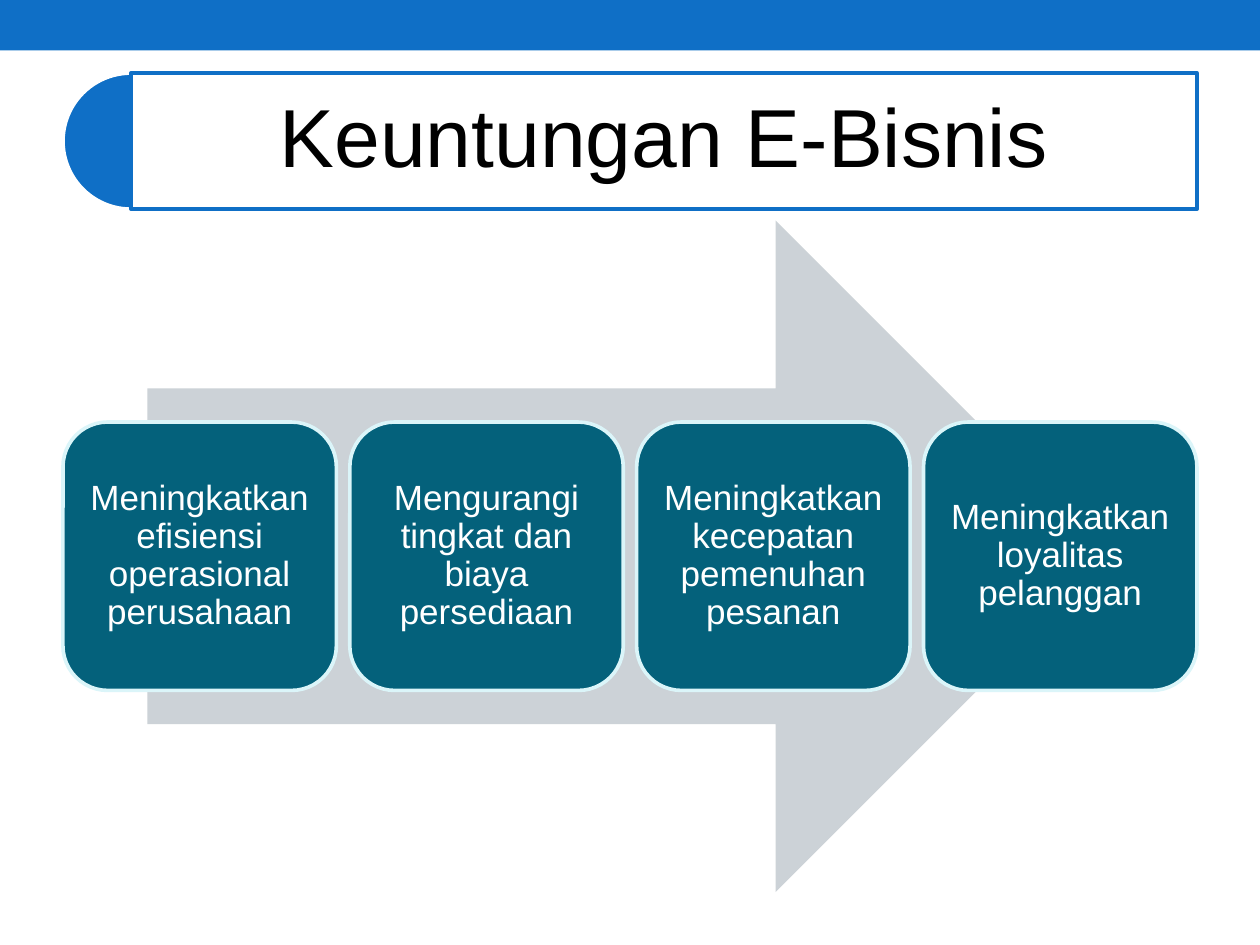
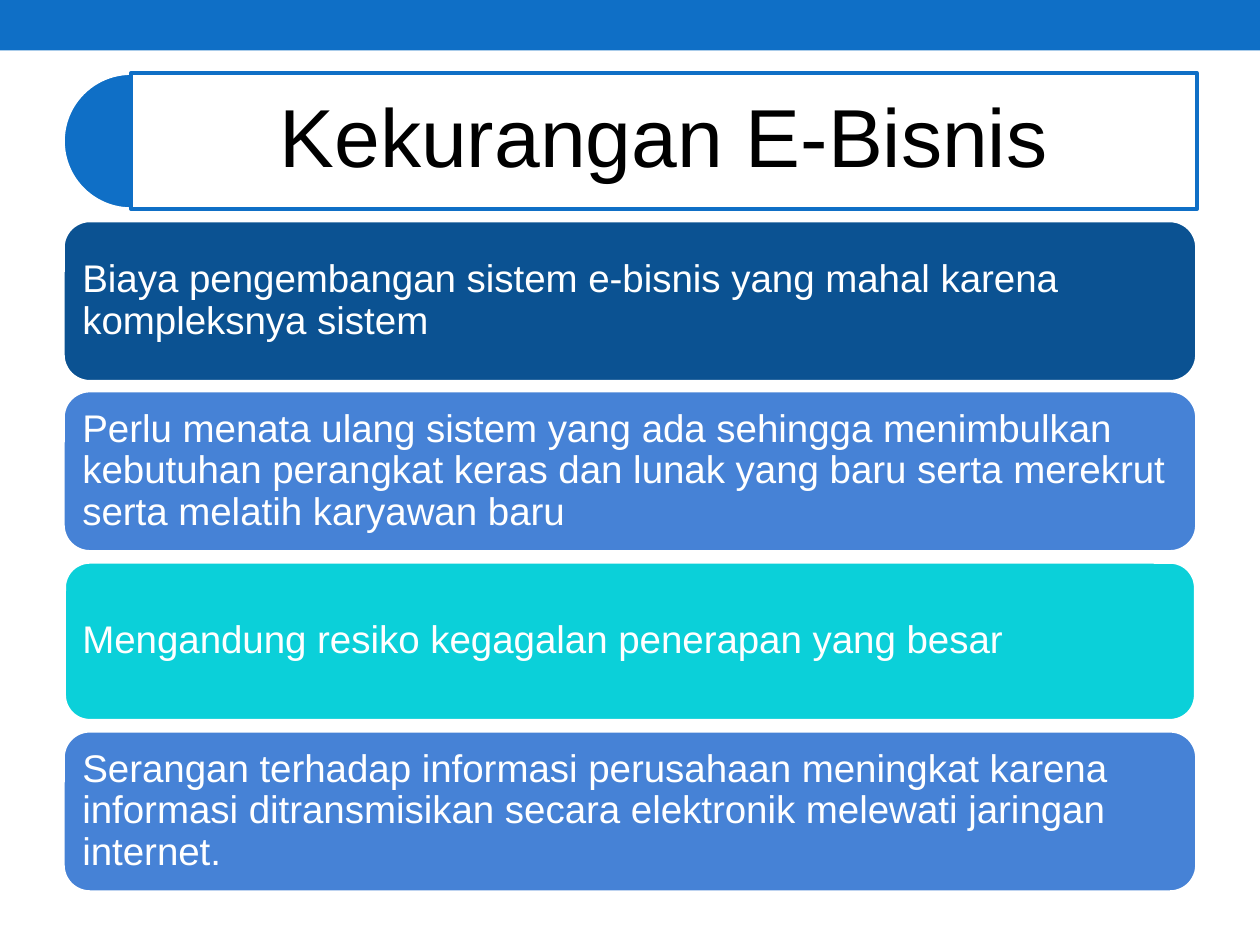
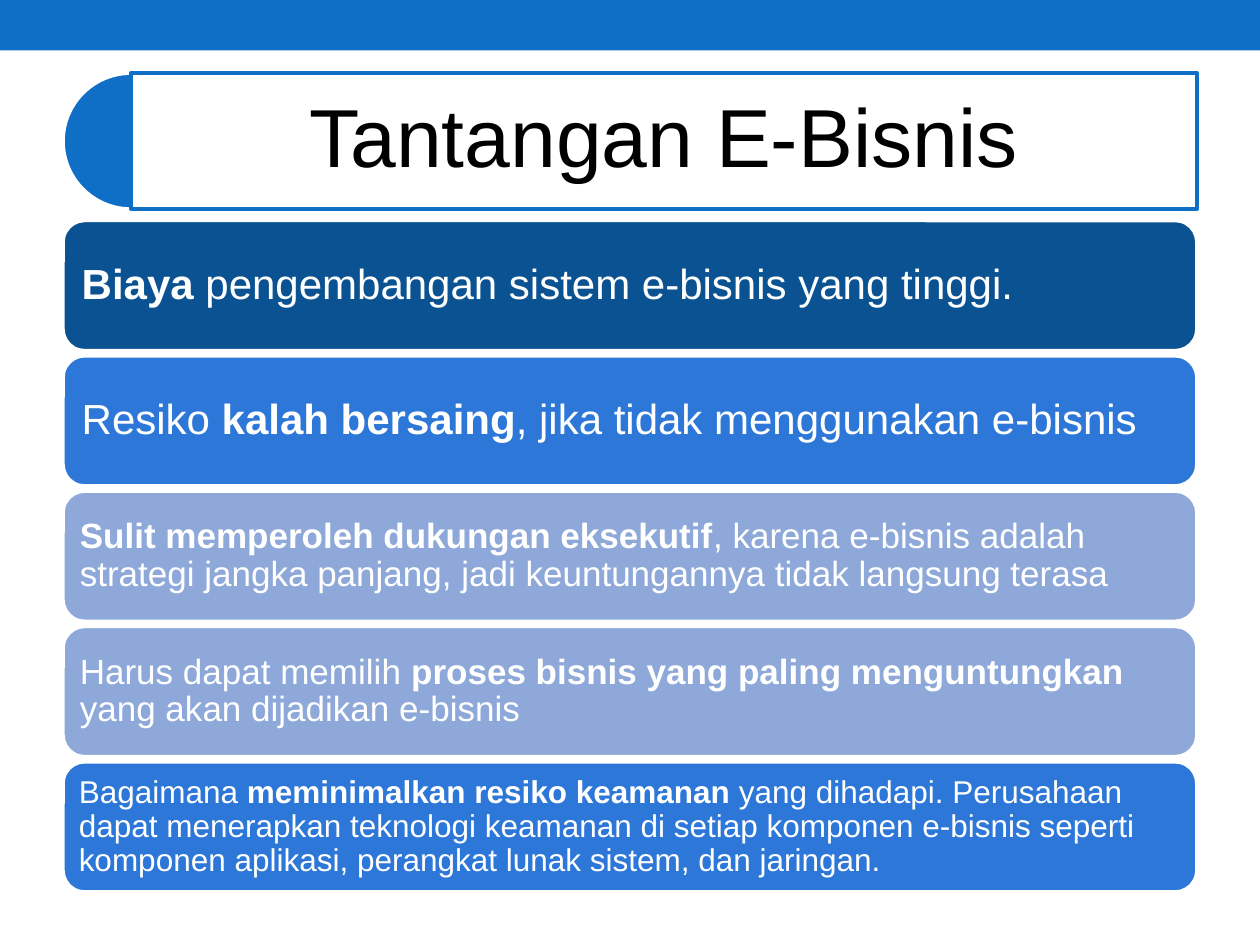
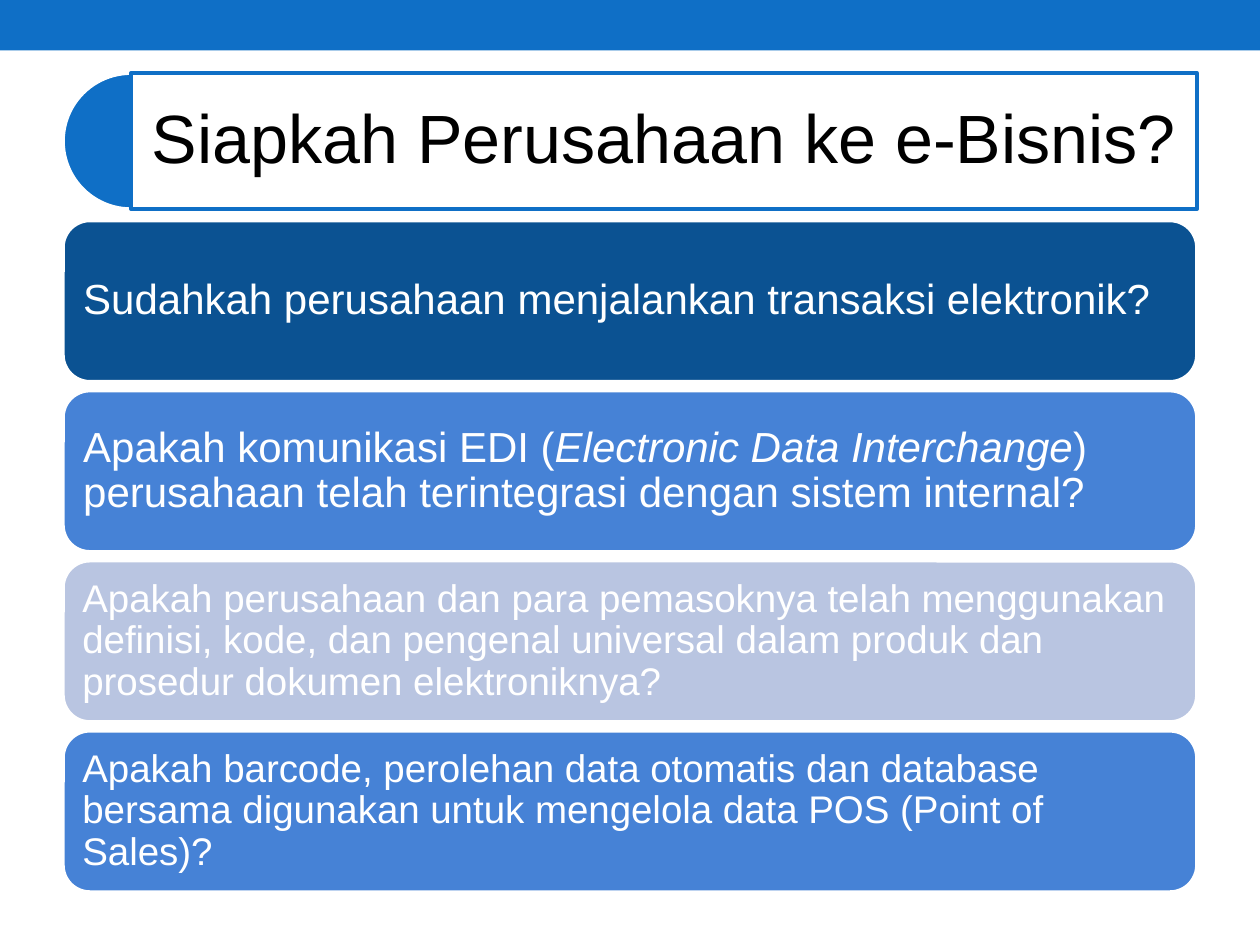
from lxml.etree import SubElement
from pptx import Presentation
from pptx.dml.color import RGBColor
from pptx.enum.shapes import MSO_SHAPE as Kind
from pptx.enum.text import MSO_ANCHOR as Anchor, PP_ALIGN as Align
from pptx.oxml.ns import qn
from pptx.util import Inches, Pt

BLUE, NAVY, TEAL, CYAN = "0F6FC6", "0B5292", "04617B", "0BD0D9"
MID, BRIGHT, SOFT, PALE = "4682D6", "2C77D7", "8EA9D9", "B9C5E1"
GREY, ICE, WHITE, BLACK = "CCD2D7", "DBF5F9", "FFFFFF", "000000"


def color(code):
    return RGBColor.from_string(code)


class Deck:
    font = "Arial"
    left, top, width, height = 0.5, 1.75, 9, 5.33

    def __init__(self):
        self.file = Presentation()
        self.file.slide_width = Inches(10)
        self.file.slide_height = Inches(7.5)
        self.slide = None

    def shape(self, kind, box, fill, line=None, weight=2.08):
        item = self.slide.shapes.add_shape(kind, *map(Inches, box))
        item.shadow.inherit = False
        item.fill.solid()
        item.fill.fore_color.rgb = color(fill)
        if line:
            item.line.color.rgb = color(line)
            item.line.width = Pt(weight)
        else:
            item.line.fill.background()
        return item

    def label(self, item, text, size, ink=WHITE, align=Align.CENTER, italic=False):
        frame = item.text_frame
        frame.word_wrap = True
        frame.vertical_anchor = Anchor.MIDDLE
        inset = Inches(size / 240)
        frame.margin_left = frame.margin_right = inset
        frame.margin_top = frame.margin_bottom = inset
        para = frame.paragraphs[0]
        para.alignment = align
        para.line_spacing = 0.9
        for index, part in enumerate(text.split("*")):
            if not part:
                continue
            run = para.add_run()
            run.text = part
            run.font.name = self.font
            run.font.size = Pt(size)
            run.font.color.rgb = color(ink)
            if index % 2:
                run.font.bold = not italic
                run.font.italic = italic

    def page(self, title, size=47):
        self.slide = self.file.slides.add_slide(self.file.slide_layouts[6])
        self.shape(Kind.RECTANGLE, (0, 0, 10, 0.4), BLUE)
        pie = self.shape(Kind.PIE, (self.left, 0.58, 1.08, 1.08), BLUE, WHITE)
        pie.adjustments[0] = 54
        pie.adjustments[1] = 162
        head = self.shape(Kind.RECTANGLE, (1.04, 0.58, 8.46, 1.08), WHITE, BLUE)
        tint = head.element.spPr.find(".//" + qn("a:srgbClr"))
        SubElement(tint, qn("a:alpha")).set("val", "90000")
        self.label(head, title, size, BLACK)

    def arrow(self):
        self.shape(Kind.RIGHT_ARROW, (1.17, self.top, 7.65, self.height), GREY)

    def cards(self, texts):
        wide = 2.17
        step = (self.width - wide) / (len(texts) - 1)
        for index, text in enumerate(texts):
            box = (self.left + index * step, 3.35, wide, 2.13)
            card = self.shape(Kind.ROUNDED_RECTANGLE, box, TEAL, ICE)
            self.label(card, text, 20)

    def bars(self, rows, gap=0.07, italic=False):
        step = (self.height + gap) / len(rows)
        for index, (fill, size, text) in enumerate(rows):
            box = (self.left, self.top + index * step, self.width, step - gap)
            weight = 3.5 if fill == CYAN else 2.08
            bar = self.shape(Kind.ROUNDED_RECTANGLE, box, fill, WHITE, weight)
            self.label(bar, text, size, align=Align.LEFT, italic=italic)


def main():
    deck = Deck()

    deck.page("Keuntungan E-Bisnis")
    deck.arrow()
    deck.cards([
        "Meningkatkan efisiensi operasional perusahaan",
        "Mengurangi tingkat dan biaya persediaan",
        "Meningkatkan kecepatan pemenuhan pesanan",
        "Meningkatkan loyalitas pelanggan",
    ])

    deck.page("Kekurangan E-Bisnis")
    deck.bars([
        (NAVY, 22, "Biaya pengembangan sistem e-bisnis yang mahal karena "
                   "kompleksnya sistem"),
        (MID, 22, "Perlu menata ulang sistem yang ada sehingga menimbulkan "
                  "kebutuhan perangkat keras dan lunak yang baru serta merekrut "
                  "serta melatih karyawan baru"),
        (CYAN, 22, "Mengandung resiko kegagalan penerapan yang besar"),
        (MID, 22, "Serangan terhadap informasi perusahaan meningkat karena "
                  "informasi ditransmisikan secara elektronik melewati jaringan "
                  "internet."),
    ])

    deck.page("Tantangan E-Bisnis")
    deck.bars([
        (NAVY, 24, "*Biaya* pengembangan sistem e-bisnis yang tinggi."),
        (BRIGHT, 24, "Resiko *kalah bersaing*, jika tidak menggunakan e-bisnis"),
        (SOFT, 20, "*Sulit memperoleh dukungan eksekutif*, karena e-bisnis adalah "
                   "strategi jangka panjang, jadi keuntungannya tidak langsung "
                   "terasa"),
        (SOFT, 20, "Harus dapat memilih *proses bisnis yang paling "
                   "menguntungkan* yang akan dijadikan e-bisnis"),
        (BRIGHT, 18, "Bagaimana *meminimalkan resiko keamanan* yang dihadapi. "
                     "Perusahaan dapat menerapkan teknologi keamanan di setiap "
                     "komponen e-bisnis seperti komponen aplikasi, perangkat "
                     "lunak sistem, dan jaringan."),
    ], gap=0.04)

    deck.page("Siapkah Perusahaan ke e-Bisnis?", 39)
    deck.bars([
        (NAVY, 24, "Sudahkah perusahaan menjalankan transaksi elektronik?"),
        (MID, 24, "Apakah komunikasi EDI (*Electronic Data Interchange*) "
                  "perusahaan telah terintegrasi dengan sistem internal?"),
        (PALE, 22, "Apakah perusahaan dan para pemasoknya telah menggunakan "
                   "definisi, kode, dan pengenal universal dalam produk dan "
                   "prosedur dokumen elektroniknya?"),
        (MID, 22, "Apakah barcode, perolehan data otomatis dan database bersama "
                  "digunakan untuk mengelola data POS (Point of Sales)?"),
    ], italic=True)

    deck.file.save("out.pptx")


if __name__ == "__main__":
    main()
